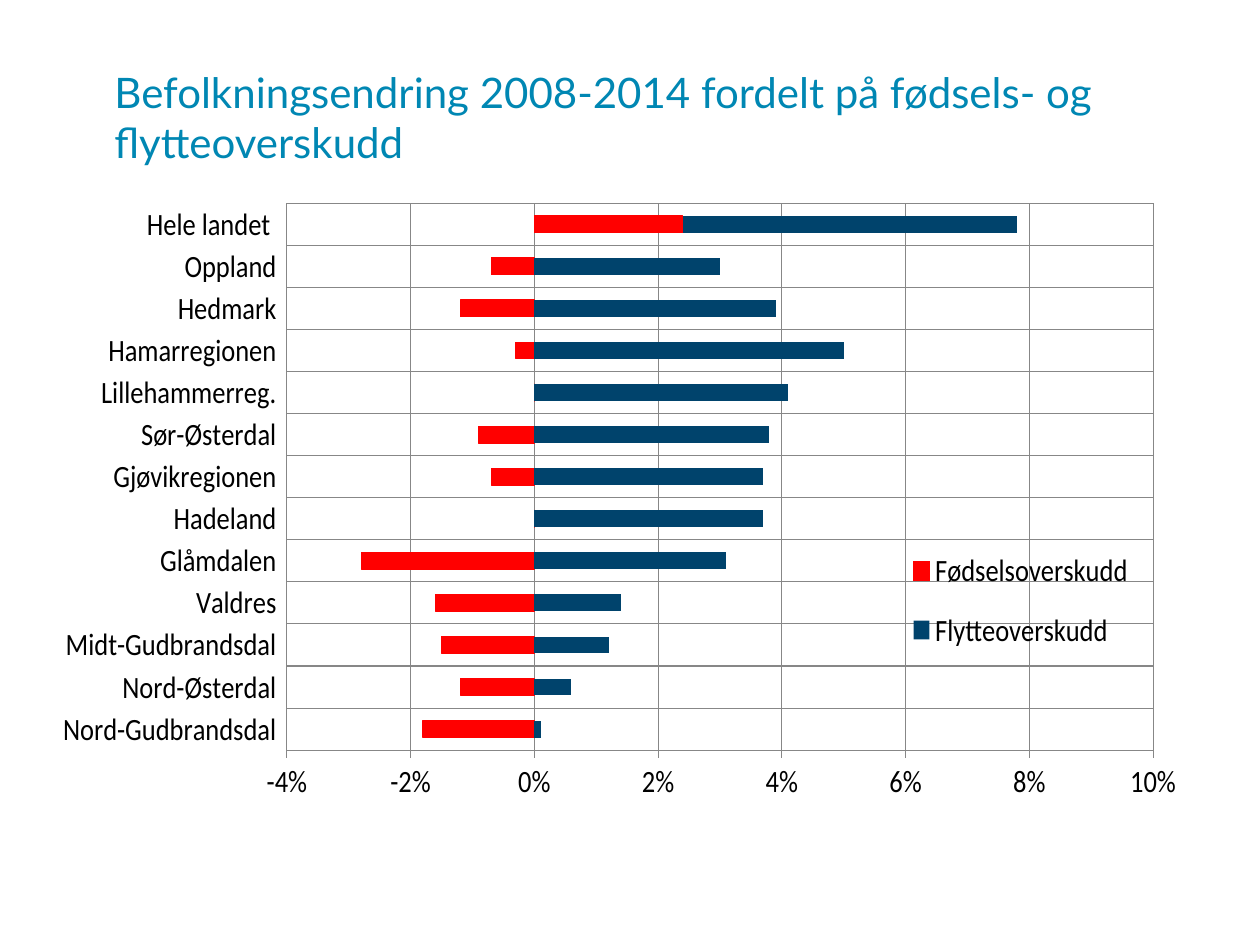
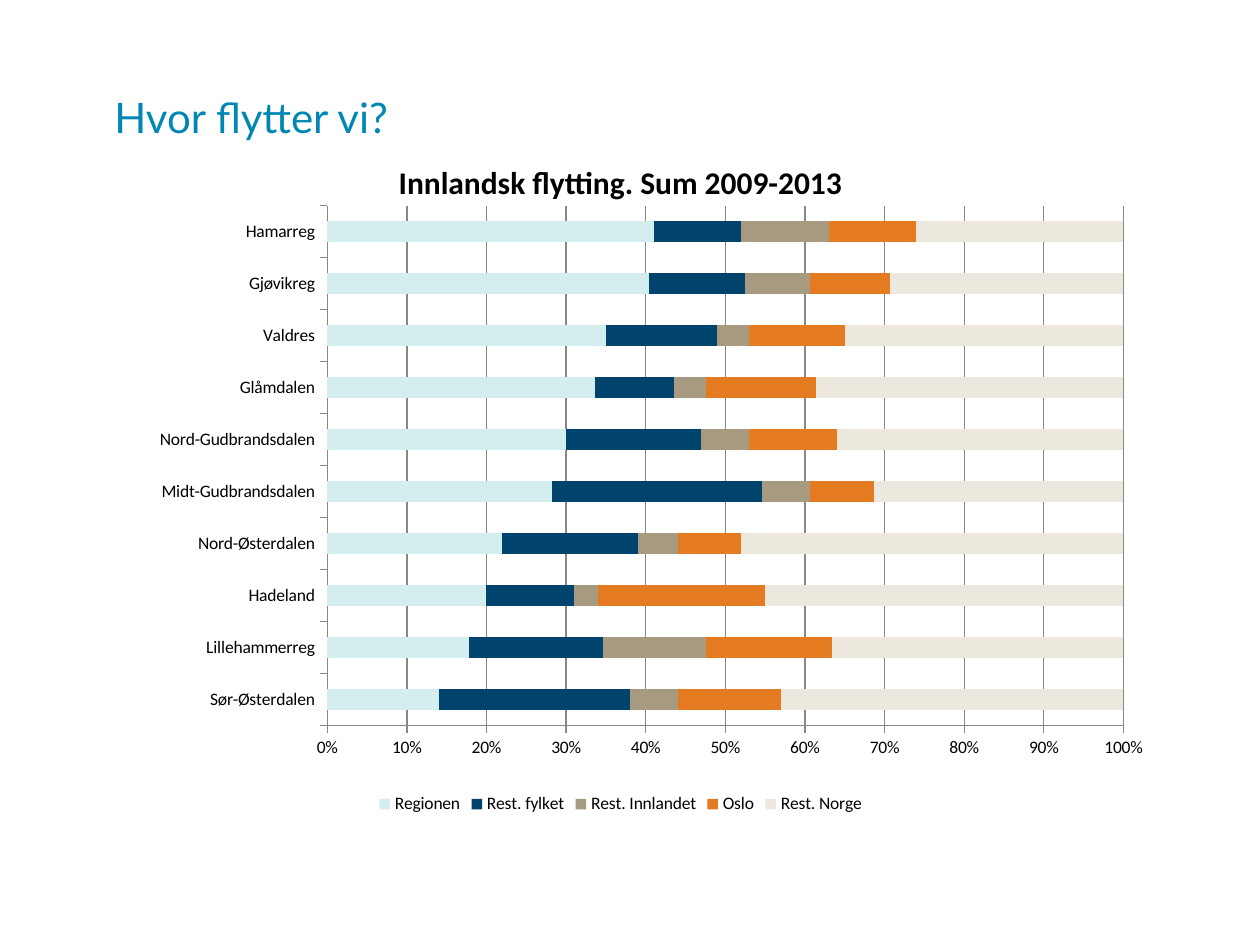
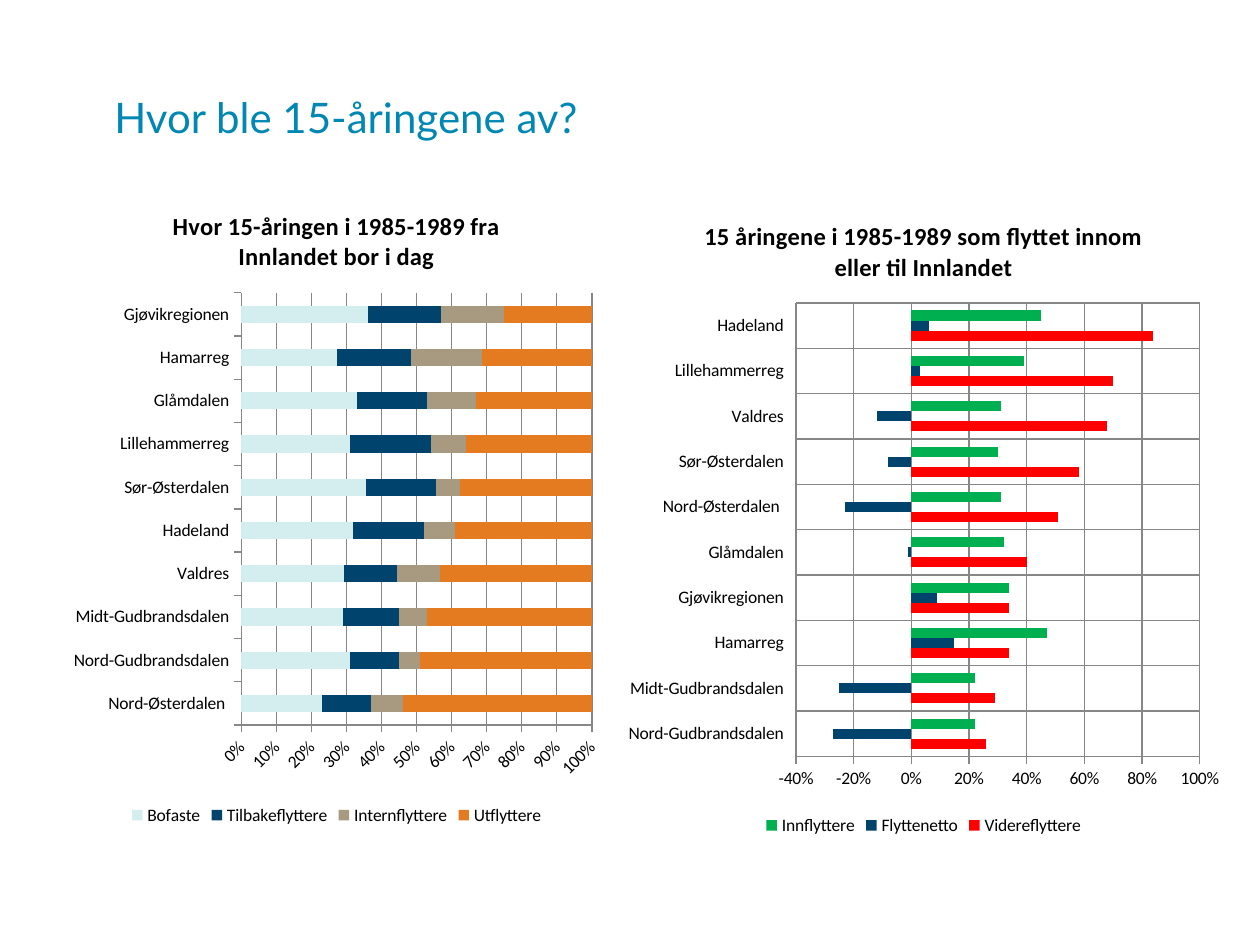
from lxml import etree
from pptx import Presentation
from pptx.chart.data import CategoryChartData
from pptx.dml.color import RGBColor
from pptx.enum.chart import XL_CHART_TYPE, XL_LEGEND_POSITION, XL_TICK_LABEL_POSITION
from pptx.enum.text import MSO_ANCHOR
from pptx.oxml.ns import qn
from pptx.util import Pt

STACKED = XL_CHART_TYPE.BAR_STACKED
STACKED_100 = XL_CHART_TYPE.BAR_STACKED_100
CLUSTERED = XL_CHART_TYPE.BAR_CLUSTERED
BOTTOM, RIGHT = XL_LEGEND_POSITION.BOTTOM, XL_LEGEND_POSITION.RIGHT
LOW = XL_TICK_LABEL_POSITION.LOW
MIDDLE = MSO_ANCHOR.MIDDLE

TITLE, BLACK, GRID = "0087B3", "000000", "878787"
RED, NAVY, GREEN = "FF0000", "00436C", "00B050"
PALE, SAND, ORANGE, CREAM = "D4EDEF", "A89A80", "E57B20", "ECE8DE"


def rgb(value):
    """Turn a hex string into a colour."""
    return RGBColor.from_string(value)


def place(element, index, box, inner=False):
    """Give a chart part a fixed place, as fractions of the chart."""
    for old in element.findall(qn("c:layout")):
        element.remove(old)
    layout = etree.Element(qn("c:layout"))
    manual = etree.SubElement(layout, qn("c:manualLayout"))
    items = [("layoutTarget", "inner")] if inner else []
    items += [("xMode", "edge"), ("yMode", "edge")] + list(zip("xywh", box))
    for name, value in items:
        etree.SubElement(manual, qn("c:" + name)).set("val", str(value))
    element.insert(index, layout)


class Deck:
    """Hold the style and the current slide."""

    def __init__(self):
        """Start an empty 10 by 7.5 inch deck."""
        self.prs = Presentation()
        self.prs.slide_width, self.prs.slide_height = Pt(720), Pt(540)
        self.s = None

    def slide(self, title):
        """Add a slide with its title."""
        self.s = self.prs.slides.add_slide(self.prs.slide_layouts[6])
        tf = self.s.shapes.add_textbox(Pt(58.3), Pt(21.6), Pt(625.7), Pt(90)).text_frame
        tf.word_wrap = True
        tf.vertical_anchor = MIDDLE
        r = tf.paragraphs[0].add_run()
        r.text = title
        r.font.name, r.font.size = "Lato", Pt(24)
        r.font.color.rgb = rgb(TITLE)

    def chart(self, kind, box, cats, series, size=10, legend=BOTTOM):
        """Add a bar chart from (name, colour, values) series."""
        data = CategoryChartData()
        data.categories = cats
        for name, _, values in series:
            data.add_series(name, values)
        chart = self.s.shapes.add_chart(kind, *map(Pt, box), data).chart
        chart.has_title = False
        chart.font.name, chart.font.size = "Calibri", Pt(size)
        chart.font.color.rgb = rgb(BLACK)
        plot = chart.plots[0]
        plot.gap_width, plot.vary_by_categories = 150, False
        plot.overlap = 0 if kind == CLUSTERED else 100
        for ser, (_, color, _) in zip(plot.series, series):
            ser.invert_if_negative = False
            ser.format.fill.solid()
            ser.format.fill.fore_color.rgb = rgb(color)
        chart.value_axis.tick_labels.number_format = "0%"
        chart.value_axis.tick_labels.number_format_is_linked = False
        for axis in (chart.category_axis, chart.value_axis):
            self.line(axis.format.line, GRID)
        self.line(chart.value_axis.major_gridlines.format.line, GRID)
        chart.has_legend = True
        chart.legend.position, chart.legend.include_in_layout = legend, False
        return chart

    def line(self, line, color):
        """Style a thin line."""
        line.color.rgb, line.width = rgb(color), Pt(0.75)

    def signed(self, chart, low, high, step):
        """Scale a chart with negative values and box in its categories."""
        axis = chart.value_axis
        axis.minimum_scale, axis.maximum_scale, axis.major_unit = low, high, step
        chart.category_axis.tick_label_position = LOW
        chart.category_axis.has_major_gridlines = True
        self.line(chart.category_axis.major_gridlines.format.line, GRID)

    def chart_title(self, chart, text, size, overlay=False):
        """Add a bold chart title."""
        title = chart.chart_title
        r = title.text_frame.paragraphs[0].add_run()
        r.text = text
        r.font.name, r.font.size, r.font.bold = "Calibri", Pt(size), True
        r.font.color.rgb = rgb(BLACK)
        if overlay:
            title._element.find(qn("c:overlay")).set("val", "1")


def population(deck):
    """Build the population change slide."""
    deck.slide("Befolkningsendring 2008-2014 fordelt på fødsels- og flytteoverskudd")
    cats = ["Nord-Gudbrandsdal", "Nord-Østerdal", "Midt-Gudbrandsdal", "Valdres", "Glåmdalen",
            "Hadeland", "Gjøvikregionen", "Sør-Østerdal", "Lillehammerreg.", "Hamarregionen",
            "Hedmark", "Oppland", "Hele landet "]
    births = [-0.018, -0.012, -0.015, -0.016, -0.028, 0, -0.007, -0.009, 0, -0.003,
              -0.012, -0.007, 0.024]
    moves = [0.001, 0.006, 0.012, 0.014, 0.031, 0.037, 0.037, 0.038, 0.041, 0.05,
             0.039, 0.03, 0.054]
    chart = deck.chart(STACKED, (36, 105.8, 648, 351.4), cats,
                       [("Fødselsoverskudd", RED, births), ("Flytteoverskudd", NAVY, moves)],
                       18, RIGHT)
    deck.signed(chart, -0.04, 0.1, 0.02)
    deck.line(chart.plots[0].series[0].format.line, RED)
    place(chart._chartSpace.chart.plotArea, 0, (0.045, 0.03, 0.909, 0.902), True)
    place(chart.legend._element, 1, (0.68, 0.57, 0.27, 0.23))


def moving(deck):
    """Build the domestic moving slide."""
    deck.slide("Hvor flytter vi?")
    cats = ["Sør-Østerdalen", "Lillehammerreg", "Hadeland", "Nord-Østerdalen",
            "Midt-Gudbrandsdalen", "Nord-Gudbrandsdalen", "Glåmdalen", "Valdres",
            "Gjøvikreg", "Hamarreg"]
    chart = deck.chart(STACKED_100, (31, 77, 647.3, 391), cats, [
        ("Regionen", PALE, [14, 18, 20, 22, 28, 30, 34, 35, 40, 41]),
        ("Rest. fylket", NAVY, [24, 17, 11, 17, 26, 17, 10, 14, 12, 11]),
        ("Rest. Innlandet", SAND, [6, 13, 3, 5, 6, 6, 4, 4, 8, 11]),
        ("Oslo", ORANGE, [13, 16, 21, 8, 8, 11, 14, 12, 10, 11]),
        ("Rest. Norge", CREAM, [43, 37, 45, 48, 31, 36, 39, 35, 29, 26])])
    deck.chart_title(chart, "Innlandsk flytting. Sum 2009-2013", 18, True)
    place(chart._chartSpace.chart.plotArea, 0, (0.241, 0.104, 0.703, 0.76), True)


def fifteen(deck):
    """Build the slide on where the 15-year-olds went."""
    deck.slide("Hvor ble 15-åringene av?")
    cats = ["Nord-Østerdalen ", "Nord-Gudbrandsdalen", "Midt-Gudbrandsdalen", "Valdres",
            "Hadeland", "Sør-Østerdalen", "Lillehammerreg", "Glåmdalen", "Hamarreg",
            "Gjøvikregionen"]
    chart = deck.chart(STACKED_100, (36, 105.8, 312.5, 368.6), cats, [
        ("Bofaste", PALE, [23, 31, 29, 29, 32, 36, 31, 33, 27, 36]),
        ("Tilbakeflyttere", NAVY, [14, 14, 16, 15, 20, 20, 23, 20, 21, 21]),
        ("Internflyttere", SAND, [9, 6, 8, 12, 9, 7, 10, 14, 20, 18]),
        ("Utflyttere", ORANGE, [54, 49, 47, 43, 39, 38, 36, 33, 31, 25])])
    deck.chart_title(chart, "Hvor 15-åringen i 1985-1989 fra Innlandet bor i dag", 14)

    cats = ["Nord-Gudbrandsdalen", "Midt-Gudbrandsdalen", "Hamarreg", "Gjøvikregionen",
            "Glåmdalen", "Nord-Østerdalen ", "Sør-Østerdalen", "Valdres", "Lillehammerreg",
            "Hadeland"]
    chart = deck.chart(CLUSTERED, (352.1, 111.6, 351.4, 368.6), cats, [
        ("Videreflyttere", RED, [0.26, 0.29, 0.34, 0.34, 0.4, 0.51, 0.58, 0.68, 0.7, 0.84]),
        ("Flyttenetto", NAVY,
         [-0.27, -0.25, 0.15, 0.09, -0.01, -0.23, -0.08, -0.12, 0.03, 0.06]),
        ("Innflyttere", GREEN, [0.22, 0.22, 0.47, 0.34, 0.32, 0.31, 0.3, 0.31, 0.39, 0.45])])
    deck.signed(chart, -0.4, 1, 0.2)
    deck.chart_title(chart, "15 åringene i 1985-1989 som flyttet innom eller til Innlandet", 14)


def main():
    """Build and save the deck."""
    deck = Deck()
    for build in (population, moving, fifteen):
        build(deck)
    deck.prs.save("out.pptx")


if __name__ == "__main__":
    main()
